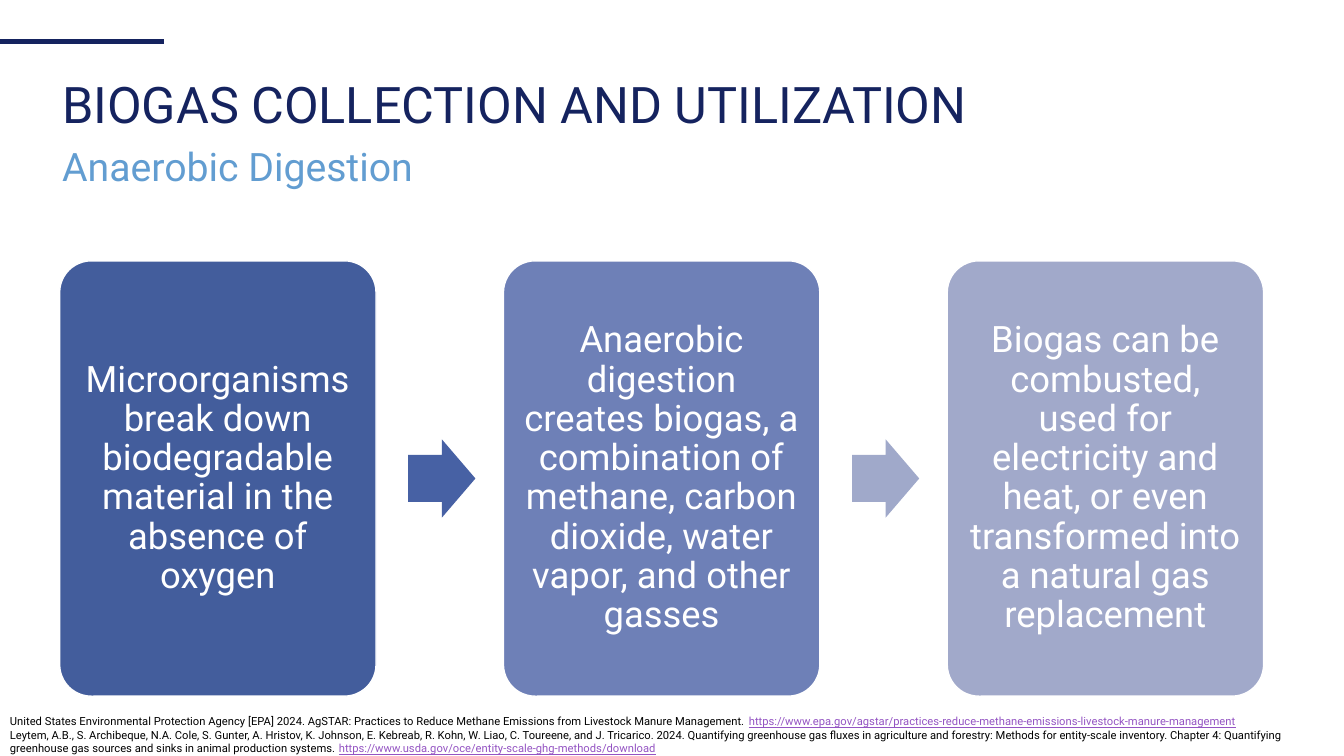
from pptx import Presentation
from pptx.dml.color import RGBColor
from pptx.enum.shapes import MSO_CONNECTOR as Conn, MSO_SHAPE as Form
from pptx.enum.text import MSO_ANCHOR as Anchor, PP_ALIGN as Align
from pptx.oxml.ns import qn
from pptx.util import Pt
from lxml.etree import SubElement

NAVY = RGBColor(0x15, 0x23, 0x5F)
SKY = RGBColor(0x62, 0x9D, 0xD1)
BLACK = RGBColor(0, 0, 0)
WHITE = RGBColor(0xFF, 0xFF, 0xFF)
PURPLE = RGBColor(0x94, 0x54, 0xC3)
BLUE = RGBColor(0x43, 0x5D, 0x9C)
MID = RGBColor(0x6E, 0x80, 0xB7)
PALE = RGBColor(0xA1, 0xA9, 0xCA)
ARROWS = [RGBColor(0x47, 0x61, 0xA4), RGBColor(0xA0, 0xA9, 0xCA)]
FONT = "Roboto"

HEADS = [
    ("BIOGAS COLLECTION AND UTILIZATION", 52.6, 36, NAVY),
    ("Anaerobic Digestion", 96.5, 28, SKY),
]
STEPS = [
    ("Microorganisms break down biodegradable material in the absence of oxygen", BLUE),
    ("Anaerobic digestion creates biogas, a combination of methane, carbon dioxide, "
     "water vapor, and other gasses", MID),
    ("Biogas can be combusted, used for electricity and heat, or even transformed "
     "into a natural gas replacement", PALE),
]
SOURCES = [
    ("United States Environmental Protection Agency [EPA] 2024. AgSTAR: Practices to "
     "Reduce Methane Emissions from Livestock Manure Management. ",
     "https://www.epa.gov/agstar/practices-reduce-methane-emissions-livestock-manure-management"),
    ("Leytem, A.B., S. Archibeque, N.A. Cole, S. Gunter, A. Hristov, K. Johnson, "
     "E. Kebreab, R. Kohn, W. Liao, C. Toureene, and J. Tricarico. 2024. Quantifying "
     "greenhouse gas fluxes in agriculture and forestry: Methods for entity-scale "
     "inventory. Chapter 4: Quantifying greenhouse gas sources and sinks in animal "
     "production systems. ",
     "https://www.usda.gov/oce/entity-scale-ghg-methods/download"),
]

LEFT, TOP, WIDE, HIGH, PITCH = 42.6, 186.3, 226, 311, 317
TIP_W, TIP_H = 48, 56

deck = Presentation()
deck.slide_width, deck.slide_height = Pt(960), Pt(540)
slide = deck.slides.add_slide(deck.slide_layouts[6])
shapes = slide.shapes


def add_run(para, text, size, color, under=False):
    run = para.add_run()
    run.text = text
    font = run.font
    font.name, font.size, font.underline = FONT, Pt(size), under
    font.color.rgb = color


def add_box(x, y, w, h, anchor):
    frame = shapes.add_textbox(Pt(x), Pt(y), Pt(w), Pt(h)).text_frame
    frame.word_wrap = True
    frame.vertical_anchor = anchor
    return frame


def add_form(kind, x, y, w, h, fill, adjust):
    form = shapes.add_shape(kind, Pt(x), Pt(y), Pt(w), Pt(h))
    form.shadow.inherit = False
    form.fill.solid()
    form.fill.fore_color.rgb = fill
    for i, part in enumerate(adjust):
        form.adjustments[i] = part
    return form


rule = shapes.add_connector(Conn.STRAIGHT, 0, Pt(29.6), Pt(117), Pt(29.6))
rule.line.color.rgb = NAVY
rule.line.width = Pt(3)
SubElement(rule._element.spPr, qn("a:effectLst"))

for i, (text, fill) in enumerate(STEPS):
    x = LEFT + i * PITCH
    card = add_form(Form.ROUNDED_RECTANGLE, x, TOP, WIDE, HIGH, fill, [0.1])
    card.line.color.rgb = WHITE
    card.line.width = Pt(1)
    frame = card.text_frame
    frame.word_wrap = True
    frame.vertical_anchor = Anchor.MIDDLE
    frame.margin_left = frame.margin_right = Pt(7.8)
    frame.margin_top = frame.margin_bottom = Pt(7.8)
    para = frame.paragraphs[0]
    para.alignment = Align.CENTER
    para.line_spacing = 0.9
    add_run(para, text, 26, WHITE)

for i, fill in enumerate(ARROWS):
    x = LEFT + i * PITCH + WIDE + 23
    y = TOP + (HIGH - TIP_H) / 2
    arrow = add_form(Form.RIGHT_ARROW, x, y, TIP_W, TIP_H, fill, [0.6, 0.5])
    arrow.line.fill.background()

for text, y, size, color in HEADS:
    para = add_box(37.4, y, 880.6, 47.5, Anchor.MIDDLE).paragraphs[0]
    para.line_spacing = 0.9
    add_run(para, text, size, color)

notes = add_box(0, 507, 960, 36, Anchor.TOP)
for i, (text, link) in enumerate(SOURCES):
    para = notes.add_paragraph() if i else notes.paragraphs[0]
    add_run(para, text, 8, BLACK)
    add_run(para, link, 8, PURPLE, True)

deck.save("out.pptx")
